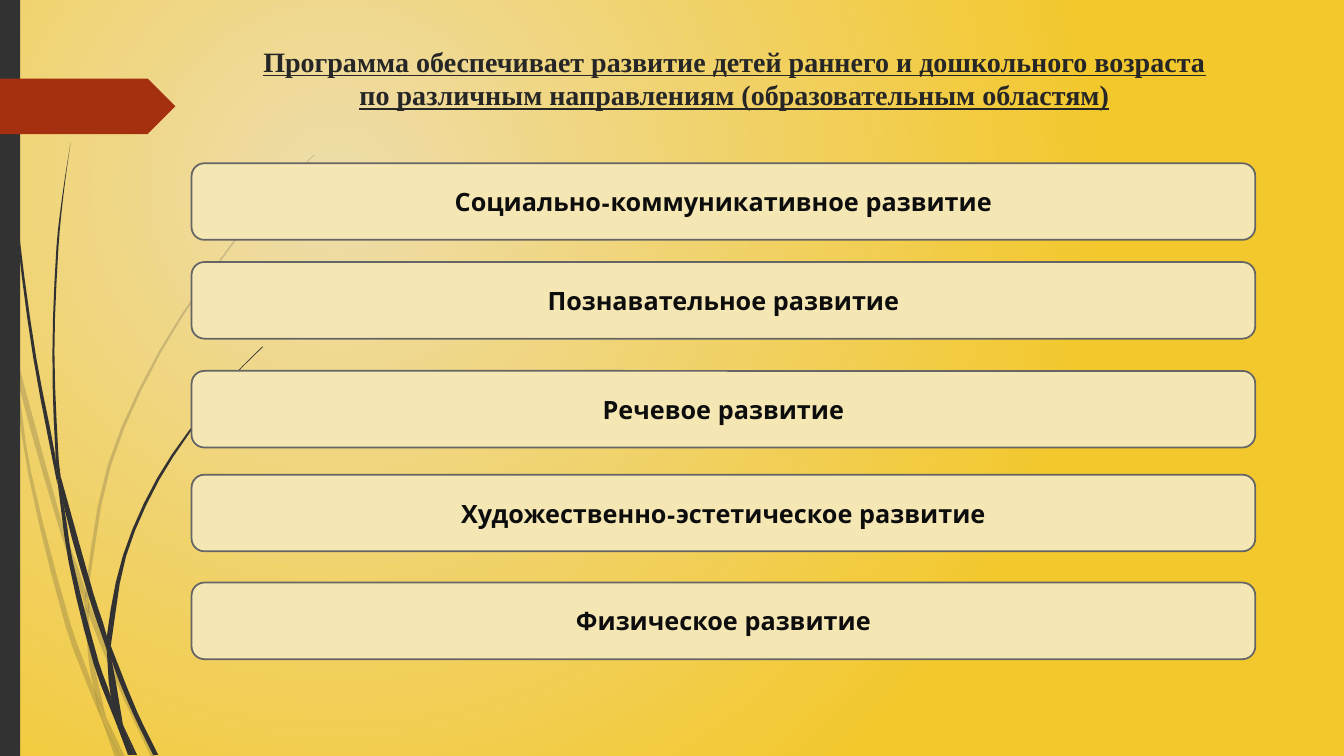
import pptx
import pptx.dml.color
import pptx.enum.shapes
import pptx.enum.text
import pptx.oxml
import pptx.oxml.ns
import pptx.util

Inches = pptx.util.Inches
RGB = pptx.dml.color.RGBColor.from_string
SHAPE = pptx.enum.shapes.MSO_SHAPE
ANCHOR = pptx.enum.text.MSO_ANCHOR
qn = pptx.oxml.ns.qn

COLORS = {
    "glow": "EEDDAB", "gold": "F3C82D", "dark": "323232", "red": "A5300F",
    "bar": "F5E7B4", "border": "656565", "title": "262626", "text": "0D0D0D",
}


def put_text(sp, text, size, font, color, anchor, underline=None):
    tf = sp.text_frame
    tf.word_wrap = True
    tf.auto_size = pptx.enum.text.MSO_AUTO_SIZE.NONE
    tf.vertical_anchor = anchor
    p = tf.paragraphs[0]
    p.alignment = pptx.enum.text.PP_ALIGN.CENTER
    r = p.add_run()
    r.text = text
    r.font.size = pptx.util.Pt(size)
    r.font.name = font
    r.font.bold = True
    r.font.underline = underline
    r.font.color.rgb = RGB(COLORS[color])


def smooth_edge(points, steps=3):
    """Hermite curve, in EMU, through (x, y) inch points that run downwards."""
    last = len(points) - 1
    slopes = []
    for i in range(last + 1):
        (xa, ya), (xb, yb) = points[max(i - 1, 0)], points[min(i + 1, last)]
        slopes.append((xb - xa) / (yb - ya))
    edge = []
    for i in range(last):
        (xa, ya), (xb, yb) = points[i], points[i + 1]
        h = yb - ya
        for k in range(steps):
            t = k / steps
            x = (xa * (1 + 2 * t) * (1 - t) ** 2 + xb * t * t * (3 - 2 * t)
                 + h * slopes[i] * t * (1 - t) ** 2
                 - h * slopes[i + 1] * t * t * (1 - t))
            edge.append((Inches(x), Inches(ya + h * t)))
    return edge + [(Inches(points[-1][0]), Inches(points[-1][1]))]


prs = pptx.Presentation()
prs.slide_width, prs.slide_height = Inches(13.33), Inches(7.5)
s = prs.slides.add_slide(prs.slide_layouts[5])

# Background: circular glow in the upper left
fill = s.background.fill
fill.gradient()
for stop, name in zip(fill.gradient_stops, ("glow", "gold")):
    stop.color.rgb = RGB(COLORS[name])
lin = next(s.element.iter(qn("a:lin")))
lin.getparent().replace(lin, pptx.oxml.parse_xml(
    '<a:path xmlns:a="http://schemas.openxmlformats.org/drawingml/2006/main" '
    'path="circle"><a:fillToRect l="50000" t="50000" r="100000" b="100000"/></a:path>'))

# Grass: each blade segment is a left edge and a right edge, top to bottom
pale_blades = [
    ([(0, 2.82), (0, 2.99), (0.1, 3.44), (0.11, 3.5)],
     [(0, 2.82), (0.09, 3.22), (0.11, 3.5)]),
    ([(0.14, 3.45), (0.17, 3.76), (0.58, 5.22), (0.84, 5.99)],
     [(0.14, 3.45), (0.62, 5.2), (0.85, 5.86), (0.84, 5.99)]),
    ([(0.88, 5.96), (0.88, 6.1), (1.23, 6.94), (1.5, 7.51)],
     [(0.88, 5.96), (0.92, 6.07), (1.27, 6.92), (1.55, 7.51)]),
    ([(1.05, 7.11), (1.19, 7.51)], [(1.05, 7.11), (1.24, 7.51)]),
    ([(0.11, 3.5), (0.28, 4.7), (0.65, 6.21), (0.92, 6.93), (1.01, 7.14)],
     [(0.11, 3.5), (0.17, 3.76), (0.31, 4.69), (0.7, 6.19), (0.93, 6.83),
      (1.01, 7.14)]),
    ([(0.84, 5.99), (0.87, 6.46), (0.93, 6.83), (1.05, 7.11)],
     [(0.84, 5.99), (0.88, 6.1), (0.91, 6.46), (1.05, 7.11)]),
    ([(3.12, 1.53), (2.89, 1.75), (2.68, 1.97), (2.28, 2.44), (1.58, 3.48),
      (1.07, 4.61), (0.85, 5.84), (0.88, 5.96)],
     [(3.12, 1.54), (2.9, 1.75), (2.68, 1.98), (2.29, 2.45), (1.6, 3.49),
      (1.1, 4.62), (0.88, 5.84), (0.88, 5.96)]),
    ([(1.01, 7.14), (1.14, 7.51)], [(1.01, 7.14), (1.19, 7.51)]),
    ([(0.85, 5.86), (0.84, 5.99), (0.88, 6.1)],
     [(0.85, 5.86), (0.88, 5.96), (0.88, 6.1)]),
    ([(0.93, 6.83), (1.01, 7.14), (1.19, 7.51)],
     [(0.93, 6.83), (1.05, 7.11), (1.19, 7.51)]),
]
dark_blades = [
    ([(0.03, 0), (0.07, 1.1), (0.17, 2.33), (0.33, 3.55), (0.57, 4.81)],
     [(0.04, 0), (0.08, 1.09), (0.19, 2.32), (0.36, 3.55), (0.55, 4.53),
      (0.57, 4.81)]),
    ([(0.6, 4.72), (0.64, 5.05), (0.88, 5.92), (1.06, 6.45)],
     [(0.6, 4.72), (0.93, 5.9), (1.06, 6.31), (1.06, 6.45)]),
    ([(1.1, 6.41), (1.11, 6.56), (1.32, 7.08), (1.52, 7.49)],
     [(1.1, 6.41), (1.36, 7.06), (1.57, 7.49)]),
    ([(0.57, 4.77), (0.68, 5.57), (0.93, 6.59), (1.17, 7.22)],
     [(0.57, 4.77), (0.64, 5.05), (0.72, 5.56), (0.98, 6.57), (1.1, 6.91),
      (1.17, 7.22)]),
    ([(0.7, 1.41), (0.62, 1.93), (0.56, 2.45), (0.52, 3.49), (0.55, 4.49),
      (0.6, 4.72)],
     [(0.7, 1.41), (0.63, 1.93), (0.58, 2.45), (0.54, 3.49), (0.58, 4.53),
      (0.6, 4.72)]),
    ([(1.22, 7.19), (1.33, 7.49)], [(1.22, 7.19), (1.36, 7.49)]),
    ([(0.55, 4.49), (0.57, 4.77), (0.64, 5.05)],
     [(0.55, 4.49), (0.6, 4.72), (0.64, 5.05)]),
    ([(2.6, 3.44), (2.31, 3.73), (2.04, 4.05), (1.56, 4.74), (1.22, 5.51),
      (1.06, 6.31), (1.1, 6.41)],
     [(2.61, 3.44), (2.31, 3.74), (2.05, 4.06), (1.58, 4.76), (1.25, 5.52),
      (1.11, 6.33), (1.1, 6.41)]),
    ([(1.17, 7.22), (1.27, 7.49)], [(1.17, 7.22), (1.31, 7.49)]),
    ([(1.06, 6.45), (1.1, 6.91), (1.22, 7.19)],
     [(1.06, 6.45), (1.11, 6.56), (1.22, 7.19)]),
    ([(1.06, 6.31), (1.06, 6.45), (1.11, 6.56)],
     [(1.06, 6.31), (1.1, 6.41), (1.11, 6.56)]),
    ([(1.1, 6.91), (1.17, 7.22), (1.3, 7.49)],
     [(1.1, 6.91), (1.22, 7.19), (1.33, 7.49)]),
]
for opacity, blades in [(20, pale_blades), (100, dark_blades)]:
    for left, right in blades:
        outline = smooth_edge(left) + smooth_edge(right)[::-1]
        builder = s.shapes.build_freeform(*outline[0])
        builder.add_line_segments(outline[1:], close=True)
        sp = builder.convert_to_shape()
        sp.shadow.inherit = False
        sp.line.fill.background()
        sp.fill.solid()
        sp.fill.fore_color.rgb = RGB(COLORS["dark"])
        if opacity < 100:
            color = next(sp.element.spPr.iter(qn("a:srgbClr")))
            color.append(color.makeelement(qn("a:alpha"), {"val": str(opacity * 1000)}))

# Left strip and red pointer
for kind, top, width, height, name in [
    (SHAPE.RECTANGLE, 0, 0.2, 7.5, "dark"),
    (SHAPE.PENTAGON, 0.78, 1.74, 0.55, "red"),
]:
    sp = s.shapes.add_shape(kind, 0, Inches(top), Inches(width), Inches(height))
    sp.shadow.inherit = False
    sp.line.fill.background()
    sp.fill.solid()
    sp.fill.fore_color.rgb = RGB(COLORS[name])

# Title
title = s.shapes.title
title.left, title.top = Inches(2.41), Inches(0.39)
title.width, title.height = Inches(9.75), Inches(0.86)
put_text(title, "Программа обеспечивает развитие детей раннего и дошкольного возраста "
         "по различным направлениям (образовательным областям)",
         size=20, font="Times New Roman", color="title", anchor=ANCHOR.TOP,
         underline=True)

# Bars of the educational areas
areas = [
    (1.62, "Социально-коммуникативное развитие"),
    (2.6, "Познавательное развитие"),
    (3.68, "Речевое развитие"),
    (4.71, "Художественно-эстетическое развитие"),
    (5.78, "Физическое развитие"),
]
for top, area in areas:
    sp = s.shapes.add_shape(SHAPE.ROUNDED_RECTANGLE, Inches(1.9), Inches(top),
                            Inches(10.55), Inches(0.76))
    sp.shadow.inherit = False
    sp.fill.solid()
    sp.fill.fore_color.rgb = RGB(COLORS["bar"])
    sp.line.color.rgb = RGB(COLORS["border"])
    sp.line.width = pptx.util.Pt(1.25)
    put_text(sp, area, size=18, font="League Spartan", color="text",
             anchor=ANCHOR.MIDDLE)

prs.save("out.pptx")
